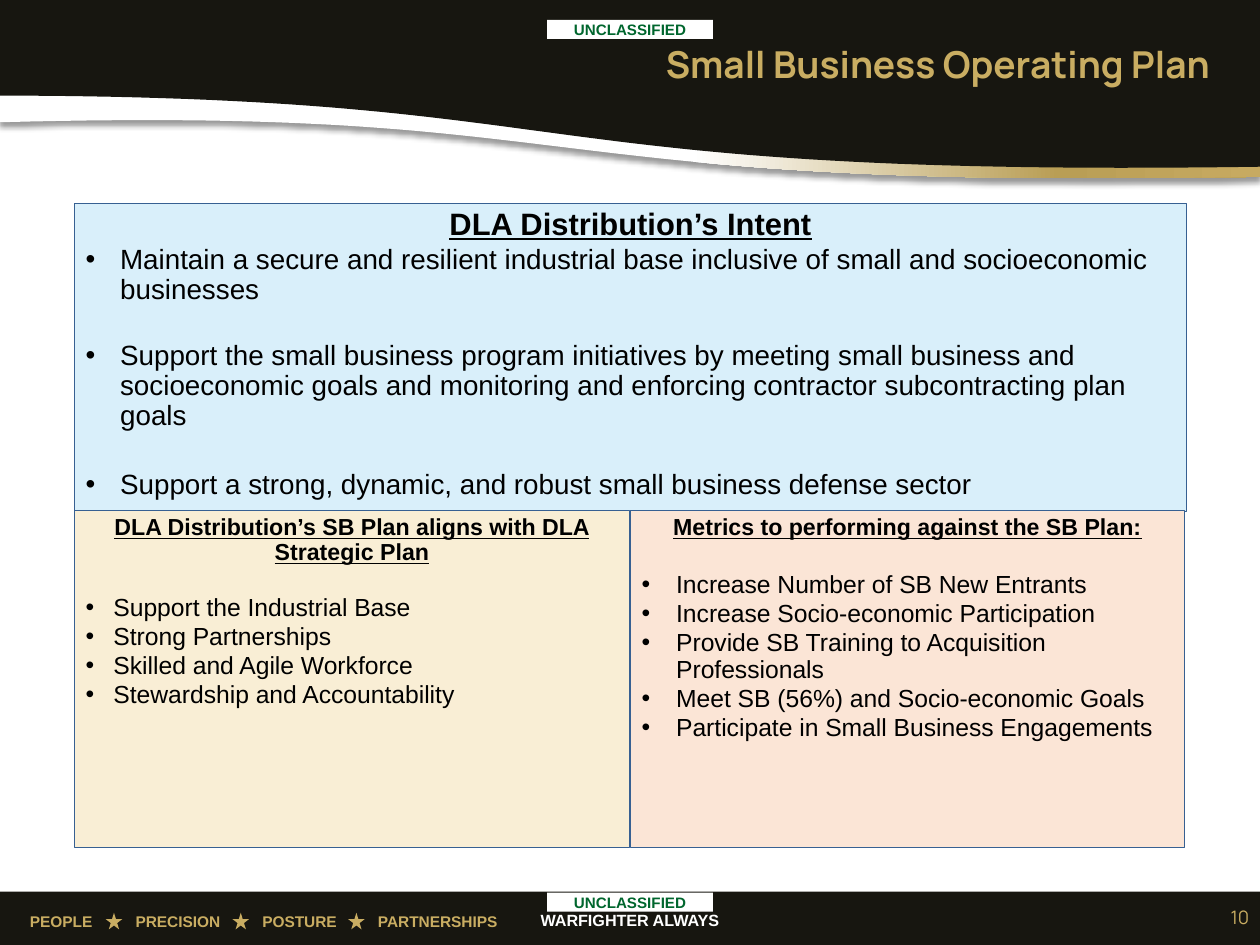
from lxml import etree
from pptx import Presentation
from pptx.dml.color import RGBColor
from pptx.enum.shapes import MSO_SHAPE
from pptx.enum.text import MSO_ANCHOR, MSO_AUTO_SIZE, PP_ALIGN
from pptx.oxml.ns import qn
from pptx.util import Inches, Pt

RECT, STAR = MSO_SHAPE.RECTANGLE, MSO_SHAPE.STAR_5_POINT
LEFT, CENTER, RIGHT = PP_ALIGN.LEFT, PP_ALIGN.CENTER, PP_ALIGN.RIGHT
TOP, MIDDLE = MSO_ANCHOR.TOP, MSO_ANCHOR.MIDDLE
NO_FIT = MSO_AUTO_SIZE.NONE

BLACK = RGBColor(0x00, 0x00, 0x00)
WHITE = RGBColor(0xFF, 0xFF, 0xFF)
CHARCOAL = RGBColor(0x17, 0x16, 0x10)
GOLD = RGBColor(0xC9, 0xAD, 0x62)
GREEN = RGBColor(0x00, 0x66, 0x2E)
BORDER = RGBColor(0x37, 0x60, 0x92)
SKY = RGBColor(0xD9, 0xEF, 0xFA)
SAND = RGBColor(0xF9, 0xEE, 0xD5)
PEACH = RGBColor(0xFB, 0xE5, 0xD6)

WIDTH, HEIGHT = 11.33, 8.5
FOOTER_TOP = 8.02


def add_xml(parent, tag, **attrs):
    return etree.SubElement(parent, qn(tag), attrs)


def curve(p0, p1, p2, p3, steps=60):
    """Points along a cubic curve."""
    points = []
    for i in range(steps + 1):
        t = i / steps
        u = 1 - t
        weights = (u ** 3, 3 * u * u * t, 3 * u * t * t, t ** 3)
        points.append(tuple(sum(w * p[axis] for w, p in zip(weights, (p0, p1, p2, p3)))
                            for axis in (0, 1)))
    return points


class Deck:
    body_font, display_font = "Arial", "Manrope"

    def __init__(self):
        self.prs = Presentation()
        self.prs.slide_width, self.prs.slide_height = Inches(WIDTH), Inches(HEIGHT)
        self.s = self.prs.slides.add_slide(self.prs.slide_layouts[4])
        self.holders = {sp.placeholder_format.idx: sp for sp in self.s.placeholders}

    def style(self, p, size, color, bold=False, underline=False, font=None, align=LEFT):
        p.alignment = align
        f = p.font
        f.name, f.size, f.bold, f.underline = font or self.body_font, Pt(size), bold, underline
        f.color.rgb = color

    def shape(self, kind, x, y, w, h, fill):
        sp = self.s.shapes.add_shape(kind, Inches(x), Inches(y), Inches(w), Inches(h))
        sp.shadow.inherit = False
        sp.fill.solid()
        sp.fill.fore_color.rgb = fill
        sp.line.fill.background()
        return sp

    def wave(self, points):
        """Band from the top of the slide down to a curved lower edge."""
        start, *rest = [(Inches(x), Inches(y)) for x, y in points]
        builder = self.s.shapes.build_freeform(*start, scale=1.0)
        builder.add_line_segments(rest, close=True)
        sp = builder.convert_to_shape()
        sp.shadow.inherit = False
        sp.line.fill.background()
        return sp

    def text(self, x, y, w, h, words, size, color, tabs=(), **style):
        sp = self.s.shapes.add_textbox(Inches(x), Inches(y), Inches(w), Inches(h))
        tf = sp.text_frame
        tf.word_wrap = True
        p = tf.paragraphs[0]
        p.text = words
        if tabs:
            tab_list = add_xml(p._p.get_or_add_pPr(), "a:tabLst")
            for stop in tabs:
                add_xml(tab_list, "a:tab", pos=str(Inches(stop)), algn="l")
        self.style(p, size, color, **style)
        return tf

    def marking(self, y):
        tf = self.shape(RECT, 4.92, y, 1.49, 0.17, WHITE).text_frame
        tf.vertical_anchor = MIDDLE
        tf.margin_top = tf.margin_bottom = 0
        tf.paragraphs[0].text = "UNCLASSIFIED"
        self.style(tf.paragraphs[0], 9.8, GREEN, bold=True, align=CENTER)

    def placeholder(self, idx, x, y, w, h, anchor):
        """Move a placeholder into place, in front of the background."""
        sp = self.holders.pop(idx)
        sp.element.getparent().append(sp.element)
        sp.left, sp.top, sp.width, sp.height = map(Inches, (x, y, w, h))
        tf = sp.text_frame
        tf.word_wrap, tf.auto_size, tf.vertical_anchor = True, NO_FIT, anchor
        return sp

    def title(self, words):
        tf = self.placeholder(0, 2.66, 0.34, 8.32, 0.47, MIDDLE).text_frame
        tf.text = words
        self.style(tf.paragraphs[0], 24, GOLD, bold=True, font=self.display_font, align=RIGHT)

    def panel(self, idx, box, fill, heading, head_size, items, size, indent, gaps):
        """Filled box with a heading and a list; gaps maps an item to its space before."""
        sp = self.placeholder(idx, *box, TOP)
        sp.fill.solid()
        sp.fill.fore_color.rgb = fill
        sp.line.color.rgb, sp.line.width = BORDER, Pt(0.75)
        tf = sp.text_frame
        for i, words in enumerate([heading, *items]):
            is_head = i == 0
            p = tf.paragraphs[0] if is_head else tf.add_paragraph()
            p.text = words
            pPr = p._p.get_or_add_pPr()
            step = 0 if is_head else Inches(indent)
            pPr.set("marL", str(step))
            pPr.set("indent", str(-step))
            if is_head:
                add_xml(pPr, "a:buNone")
            else:
                add_xml(pPr, "a:buFont", typeface=self.body_font)
                add_xml(pPr, "a:buChar", char="•")
            p.line_spacing = 0.9
            p.space_before = Pt(0 if is_head else gaps.get(i, size / 10))
            p.space_after = Pt(0)
            self.style(p, head_size if is_head else size, BLACK, bold=is_head,
                       underline=is_head, align=CENTER if is_head else LEFT)

    def remove_unused(self):
        for sp in self.holders.values():
            sp.element.getparent().remove(sp.element)


def add_header(deck):
    # Gold swoosh with a soft shadow
    edge = curve((0, 1.1), (5.49, 0.95), (4.54, 1.72), (WIDTH, 1.59))
    swoosh = deck.wave([(WIDTH, 0.59), (0, 0.59), *edge])
    spPr = swoosh.element.spPr
    grad = etree.Element(qn("a:gradFill"), rotWithShape="1")
    stops = add_xml(grad, "a:gsLst")
    for pos, color in ((0, "FFFFFF"), (55, "FFFFFF"), (84, "B99E55"), (100, "C7AA61")):
        add_xml(add_xml(stops, "a:gs", pos=str(pos * 1000)), "a:srgbClr", val=color)
    add_xml(grad, "a:lin", ang="0", scaled="0")
    spPr.find(qn("a:custGeom")).addnext(grad)
    shadow = add_xml(spPr.find(qn("a:effectLst")), "a:outerShdw", blurRad=str(Pt(4)),
                     dist=str(Pt(3)), dir="5400000", algn="t", rotWithShape="0")
    add_xml(add_xml(shadow, "a:srgbClr", val="000000"), "a:alpha", val="40000")

    # Dark band above it
    edge = curve((0, 0.86), (5.46, 0.87), (4.52, 1.6), (WIDTH, 1.5))
    band = deck.wave([(WIDTH, 0), (0, 0), *edge])
    band.fill.solid()
    band.fill.fore_color.rgb = CHARCOAL
    deck.marking(0.18)


def add_footer(deck):
    deck.shape(RECT, 0, FOOTER_TOP, WIDTH, HEIGHT - FOOTER_TOP, CHARCOAL)
    deck.marking(8.03)
    deck.text(4.47, 8.14, 2.39, 0.28, "WARFIGHTER ALWAYS", 10.5, WHITE, bold=True, align=CENTER)
    stars = (0.95, 2.09, 3.13)
    values = ("PEOPLE", "PRECISION", "POSTURE", "PARTNERSHIPS")
    deck.text(0.17, 8.15, 4.61, 0.28, "\t".join(values), 10, GOLD, tabs=stars, bold=True)
    for x in stars:
        deck.shape(STAR, x, 8.21, 0.15, 0.15, GOLD)
    number = deck.text(10.83, FOOTER_TOP, 0.5, 0.45, "10", 12, GOLD,
                       font=deck.display_font, align=RIGHT)
    number.vertical_anchor = MIDDLE


def add_plan(deck):
    deck.title("Small Business Operating Plan")
    deck.panel(1, (0.67, 1.83, 10, 2.77), SKY, "DLA Distribution’s Intent", 20, [
        "Maintain a secure and resilient industrial base inclusive of small and "
        "socioeconomic businesses",
        "Support the small business program initiatives by meeting small business and "
        "socioeconomic goals and monitoring and enforcing contractor subcontracting plan goals",
        "Support a strong, dynamic, and robust small business defense sector",
    ], 18, 0.31, {2: 23.5, 3: 25})
    deck.panel(2, (0.67, 4.59, 4.99, 3.03), SAND,
               "DLA Distribution’s SB Plan aligns with DLA Strategic Plan", 15, [
                   "Support the Industrial Base",
                   "Strong Partnerships",
                   "Skilled and Agile Workforce",
                   "Stewardship and Accountability",
               ], 16, 0.25, {1: 19})
    deck.panel(3, (5.67, 4.59, 4.98, 3.03), PEACH,
               "Metrics to performing against the SB Plan:", 15, [
                   "Increase Number of SB New Entrants",
                   "Increase Socio-economic Participation",
                   "Provide SB Training to Acquisition Professionals",
                   "Meet SB (56%) and Socio-economic Goals",
                   "Participate in Small Business Engagements",
               ], 16, 0.31, {1: 20})


def main():
    deck = Deck()
    add_header(deck)
    add_footer(deck)
    add_plan(deck)
    deck.remove_unused()
    deck.prs.save("out.pptx")


if __name__ == "__main__":
    main()
